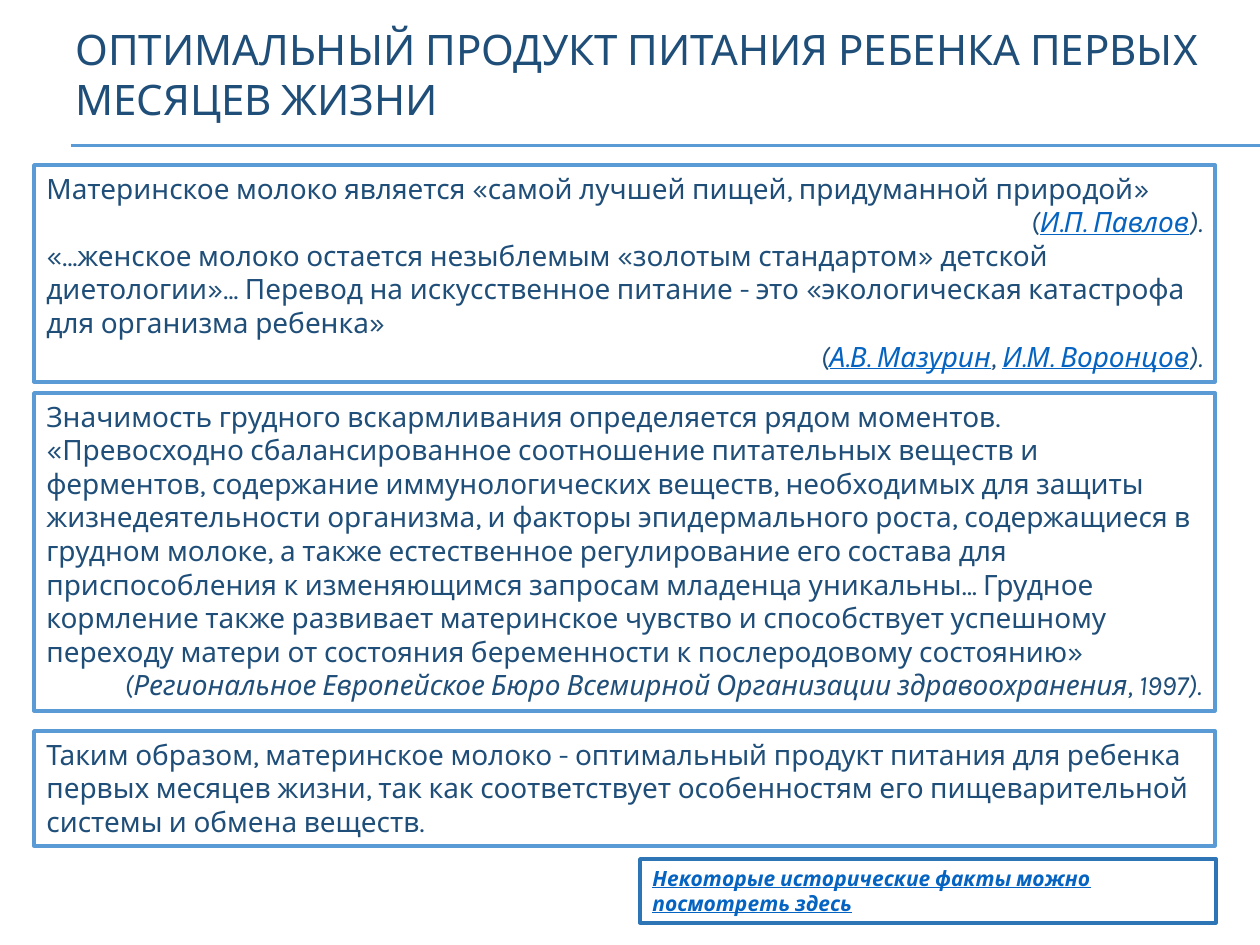
from lxml import etree
from pptx import Presentation
from pptx.dml.color import RGBColor
from pptx.enum.shapes import MSO_CONNECTOR, MSO_SHAPE
from pptx.enum.text import MSO_ANCHOR, PP_ALIGN
from pptx.oxml.ns import qn
from pptx.util import Emu, Pt

STRAIGHT = MSO_CONNECTOR.STRAIGHT
RECT = MSO_SHAPE.RECTANGLE
MIDDLE, TOP = MSO_ANCHOR.MIDDLE, MSO_ANCHOR.TOP
LEFT, RIGHT = PP_ALIGN.LEFT, PP_ALIGN.RIGHT

NAVY = RGBColor(0x1F, 0x4E, 0x79)
BLUE = RGBColor(0x5B, 0x9B, 0xD5)
DEEP_BLUE = RGBColor(0x2E, 0x75, 0xB6)
LINK = RGBColor(0x05, 0x63, 0xC1)
WHITE = RGBColor(0xFF, 0xFF, 0xFF)
FONT = "Karla"


def px(n):
    return Emu(round(n * 914400 / 126))


def add_run(p, text, size, italic=False, linked=False, bold=False):
    r = p.add_run()
    r.text = text
    f = r.font
    f.name, f.size, f.bold, f.italic = FONT, Pt(size), bold, italic
    f.underline = linked
    f.color.rgb = LINK if linked else NAVY


prs = Presentation()
prs.slide_width, prs.slide_height = px(1260), px(945)
s = prs.slides.add_slide(prs.slide_layouts[6])

# Double rule under the title
for y in (145, 146):
    rule = s.shapes.add_connector(STRAIGHT, px(71), px(y), px(1260), px(y))
    rule.line.color.rgb = BLUE
    rule.line.width = Pt(0.75)
    etree.SubElement(rule._element.spPr, qn("a:effectLst"))

# Title
sp = s.shapes.add_textbox(px(63), px(16), px(1197), px(116))
tf = sp.text_frame
tf.word_wrap = True
tf.vertical_anchor = MIDDLE
add_run(tf.paragraphs[0], "ОПТИМАЛЬНЫЙ ПРОДУКТ ПИТАНИЯ РЕБЕНКА ПЕРВЫХ МЕСЯЦЕВ ЖИЗНИ", 24)

# Box contents: paragraphs of (alignment, runs); a run is (text, italic, linked)
QUOTES = [
    (LEFT, [("Материнское молоко является «самой лучшей пищей, придуманной природой»", False, False)]),
    (RIGHT, [("(", True, False), ("И.П. Павлов", True, True), (").", True, False)]),
    (LEFT, [("«…женское молоко остается незыблемым «золотым стандартом» детской "
             "диетологии»… Перевод на искусственное питание - это «экологическая "
             "катастрофа для организма ребенка»", False, False)]),
    (RIGHT, [("(", True, False), ("А.В. Мазурин", True, True), (", ", True, False),
             ("И.М. Воронцов", True, True), (").", True, False)]),
]
IMPORTANCE = [
    (LEFT, [("Значимость грудного вскармливания определяется рядом моментов. "
             "«Превосходно сбалансированное соотношение питательных веществ и ферментов, "
             "содержание иммунологических веществ, необходимых для защиты "
             "жизнедеятельности организма, и факторы эпидермального роста, содержащиеся "
             "в грудном молоке, а также естественное регулирование его состава для "
             "приспособления к изменяющимся запросам младенца уникальны… Грудное "
             "кормление также развивает материнское чувство и способствует успешному "
             "переходу матери от состояния беременности к послеродовому состоянию»",
             False, False)]),
    (RIGHT, [("(Региональное Европейское Бюро Всемирной Организации здравоохранения, 1997).",
              True, False)]),
]
CONCLUSION = [
    (LEFT, [("Таким образом, материнское молоко - оптимальный продукт питания для ребенка "
             "первых месяцев жизни, так как соответствует особенностям его "
             "пищеварительной системы и обмена веществ.", False, False)]),
]
HISTORY = [(LEFT, [("Некоторые исторические факты можно посмотреть здесь", True, True)])]

# Framed boxes: left, top, width, height, line colour, size, bold, paragraphs
BOXES = [
    (34, 165, 1181, 217, BLUE, 16, False, QUOTES),
    (34, 393, 1181, 318, BLUE, 16, False, IMPORTANCE),
    (34, 731, 1181, 115, BLUE, 16, False, CONCLUSION),
    (640, 859, 576, 64, DEEP_BLUE, 12, True, HISTORY),
]
for x, y, w, h, colour, size, bold, paragraphs in BOXES:
    sp = s.shapes.add_shape(RECT, px(x), px(y), px(w), px(h))
    sp.shadow.inherit = False
    sp.fill.solid()
    sp.fill.fore_color.rgb = WHITE
    sp.line.color.rgb = colour
    sp.line.width = Pt(2)
    tf = sp.text_frame
    tf.word_wrap = True
    tf.vertical_anchor = TOP
    for i, (align, runs) in enumerate(paragraphs):
        p = tf.add_paragraph() if i else tf.paragraphs[0]
        p.alignment = align
        for text, italic, linked in runs:
            add_run(p, text, size, italic, linked, bold)

prs.save("out.pptx")
